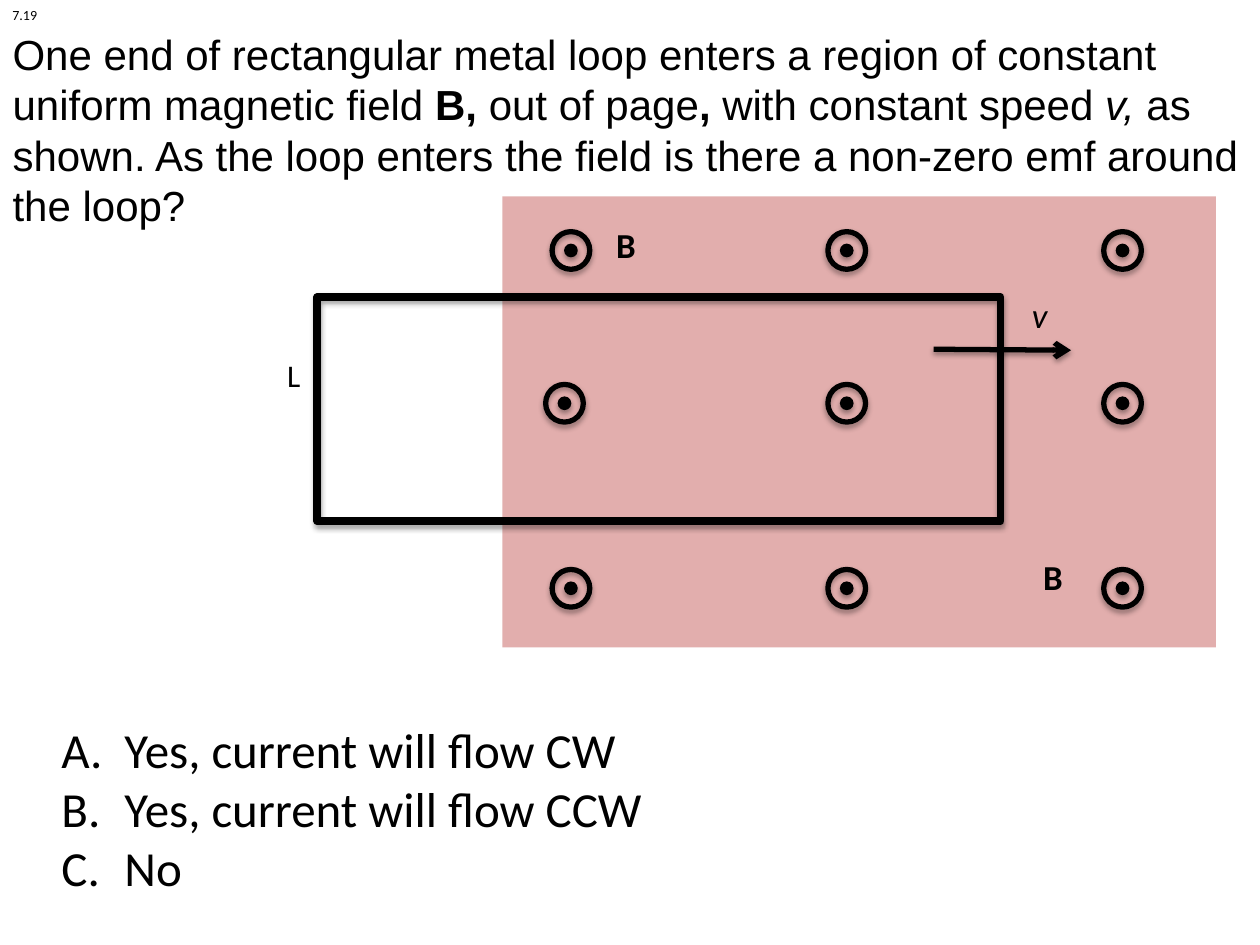
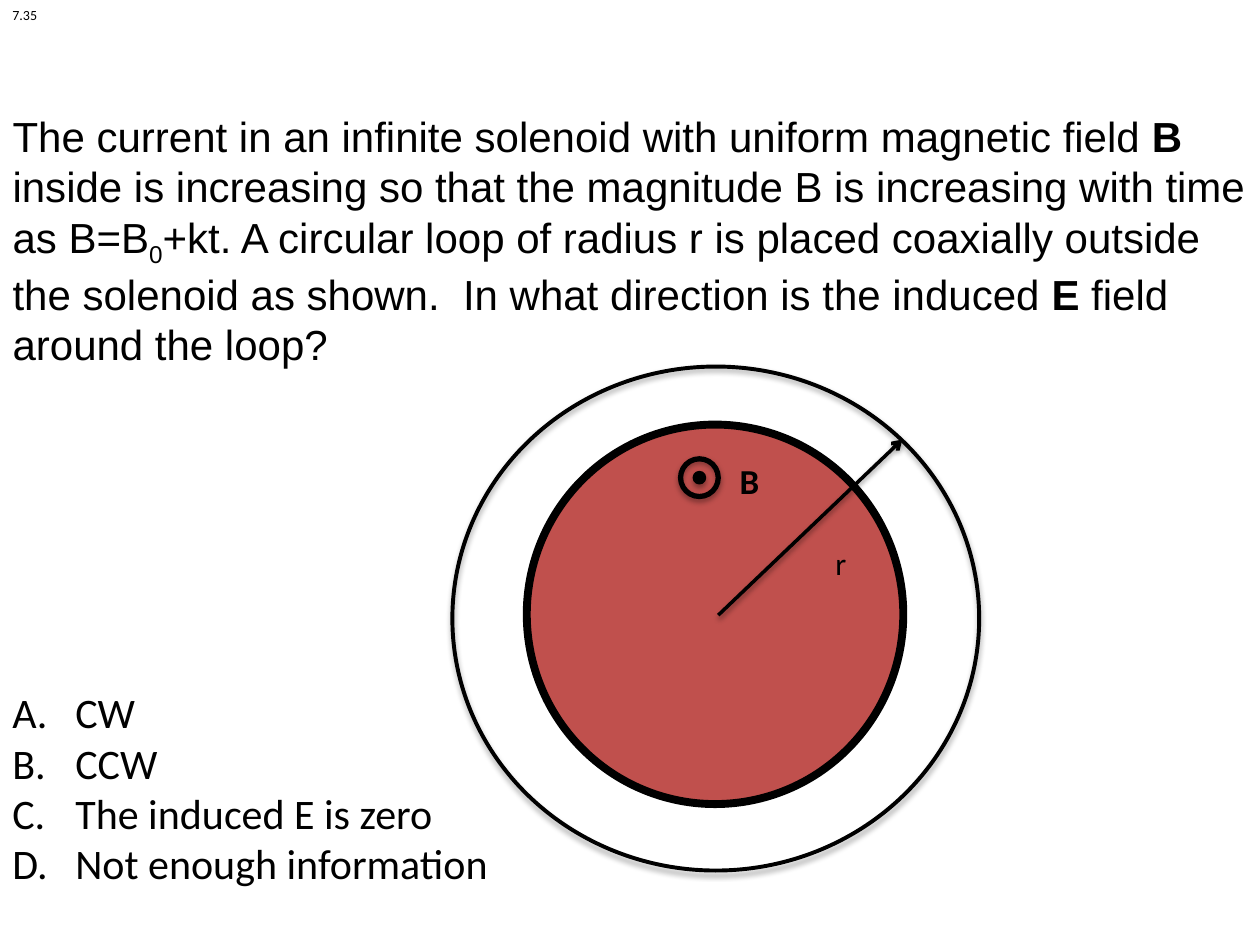
"""Build two physics concept questions on electromagnetic induction."""
from lxml.etree import SubElement
from pptx import Presentation
from pptx.dml.color import RGBColor
from pptx.enum.shapes import MSO_CONNECTOR, MSO_SHAPE
from pptx.enum.text import MSO_ANCHOR, MSO_AUTO_SIZE, PP_ALIGN
from pptx.oxml.ns import qn
from pptx.util import Cm, Pt

COLORS = {"ink": "000000", "field": "C0504D"}
QUESTION_FONT, BODY_FONT = "Arial", "Calibri"
SLIDE_WIDTH, SLIDE_HEIGHT = 25.4, 19.05
RING_SIZE, DOT_SIZE = 0.76, 0.25
COLUMN_STEP = 5.56

LOOP_QUESTION = {
    "number": "7.19",
    "title_box": (0, 0, SLIDE_WIDTH, 5.21),
    "title": [
        ("One end of rectangular metal loop enters a region of constant uniform magnetic field ", ""),
        ("B, ", "bold"),
        ("out of page", ""),
        (",", "bold"),
        (" with constant speed ", ""),
        ("v,", "italic"),
        (" as shown. As the loop enters the field is there a non-zero emf around the loop?", ""),
    ],
    "answers_box": (0.99, 14.38, 14.22, 3.84),
    "answers_size": 28,
    "answers": ["Yes, current will flow CW", "Yes, current will flow CCW", "No"],
}
FIELD_REGION = (10.13, 3.96, 14.38, 9.09)
FIELD_ROWS = [(11.13, 4.67), (11, 7.75), (11.13, 11.48)]
METAL_LOOP = (6.4, 5.99, 13.77, 4.52)
VELOCITY = (18.82, 7.04, 21.59, 7.06)
LOOP_LABELS = [
    ("B", (12.17, 4.39, 1.02, 1.12), 20, "bold"),
    ("B", (20.78, 11.07, 1.02, 1.12), 20, "bold"),
    ("v", (20.55, 5.79, 1.04, 1.12), 20, "italic"),
    ("L", (5.54, 7.06, 0.84, 1.02), 18, ""),
]

SOLENOID_QUESTION = {
    "number": "7.35",
    "title_box": (0, 1.57, SLIDE_WIDTH, 6.53),
    "title": [
        ("The current in an infinite solenoid with uniform magnetic field ", ""),
        ("B", "bold"),
        (" inside is increasing so that the magnitude B is increasing with time as B=B", ""),
        ("0", "subscript"),
        ("+kt. A circular loop of radius r is placed coaxially outside the solenoid as shown.  "
         "In what direction is the induced ", ""),
        ("E", "bold"),
        (" field around the loop?", ""),
    ],
    "answers_box": (0, 13.72, 17.45, 4.37),
    "answers_size": 24,
    "answers": ["CW", "CCW", "The induced E is zero", "Not enough information"],
}
SOLENOID = (10.62, 8.56, 7.59, 7.65)
CIRCULAR_LOOP = (9.12, 7.39, 10.62, 10.16)
SOLENOID_FIELD = (13.72, 9.25)
RADIUS = (14.48, 12.4, 18.19, 8.86)
FIELD_LABEL = ("B", (14.66, 9.14, 1.02, 1.12), 20, "bold")
RADIUS_LABEL = ("r", (16.59, 10.85, 1.04, 1.02), 18, "")


def color(name):
    return RGBColor.from_string(COLORS[name])


def lengths(values):
    return [Cm(value) for value in values]


def style_paragraph(paragraph, size, name=BODY_FONT, style=""):
    font = paragraph.font
    font.size, font.name = Pt(size), name
    font.color.rgb = color("ink")
    font.bold, font.italic = style == "bold", style == "italic"


def set_shadow(shape, distance=None, alpha=35):
    effects = SubElement(shape._element.spPr, qn("a:effectLst"))
    if distance is None:
        return
    shadow = SubElement(effects, qn("a:outerShdw"), blurRad=str(Pt(3.1)),
                        dist=str(Pt(distance)), dir="5400000", rotWithShape="0")
    shade = SubElement(shadow, qn("a:srgbClr"), val=COLORS["ink"])
    SubElement(shade, qn("a:alpha"), val=str(alpha * 1000))


def add_outline(shapes, kind, box, fill=None, line_width=None, shadow=None, opacity=None):
    shape = shapes.add_shape(kind, *lengths(box))
    if fill:
        shape.fill.solid()
        shape.fill.fore_color.rgb = color(fill)
    else:
        shape.fill.background()
    if opacity:
        tint = shape._element.spPr.find(".//" + qn("a:srgbClr"))
        SubElement(tint, qn("a:alpha"), val=str(opacity * 1000))
    if line_width:
        shape.line.color.rgb = color("ink")
        shape.line.width = Pt(line_width)
    else:
        shape.line.fill.background()
    set_shadow(shape, shadow)


def add_field_symbol(slide, left, top):
    shapes = slide.shapes.add_group_shape().shapes
    inset = (RING_SIZE - DOT_SIZE) / 2
    add_outline(shapes, MSO_SHAPE.OVAL, (left, top, RING_SIZE, RING_SIZE), None, 3, 1.8)
    add_outline(shapes, MSO_SHAPE.OVAL, (left + inset, top + inset, DOT_SIZE, DOT_SIZE),
                "ink", 0.75, 1.8)


def add_arrow(slide, ends, width):
    arrow = slide.shapes.add_connector(MSO_CONNECTOR.STRAIGHT, *lengths(ends))
    arrow.line.color.rgb = color("ink")
    arrow.line.width = Pt(width)
    SubElement(arrow.line._get_or_add_ln(), qn("a:tailEnd"), type="arrow")
    set_shadow(arrow, 1.6, 38)


def add_label(slide, text, box, size, style="", fill=None):
    label = slide.shapes.add_textbox(*lengths(box))
    label.text_frame.word_wrap = False
    label.text_frame.text = text
    style_paragraph(label.text_frame.paragraphs[0], size, style=style)
    if fill:
        label.fill.solid()
        label.fill.fore_color.rgb = color(fill)


def add_title(slide, box, runs):
    title = slide.shapes.title
    title.left, title.top, title.width, title.height = lengths(box)
    frame = title.text_frame
    frame.auto_size = MSO_AUTO_SIZE.NONE
    frame.vertical_anchor = MSO_ANCHOR.MIDDLE
    paragraph = frame.paragraphs[0]
    paragraph.alignment = PP_ALIGN.LEFT
    style_paragraph(paragraph, 24, QUESTION_FONT)
    for text, style in runs:
        run = paragraph.add_run()
        run.text = text
        if style == "bold":
            run.font.bold = True
        elif style == "italic":
            run.font.italic = True
        elif style == "subscript":
            run.font._element.set("baseline", "-25000")


def add_answers(slide, box, size, answers):
    frame = slide.shapes.add_textbox(*lengths(box)).text_frame
    frame.word_wrap = True
    frame.text = "\n".join(answers)
    for paragraph in frame.paragraphs:
        properties = paragraph._p.get_or_add_pPr()
        properties.set("marL", str(Cm(1.27)))
        properties.set("indent", str(-Cm(1.27)))
        SubElement(properties, qn("a:buAutoNum"), type="alphaUcPeriod")
        style_paragraph(paragraph, size)


def add_question(presentation, question):
    slide = presentation.slides.add_slide(presentation.slide_layouts.get_by_name("Title Only"))
    add_title(slide, question["title_box"], question["title"])
    add_answers(slide, question["answers_box"], question["answers_size"], question["answers"])
    add_label(slide, question["number"], (0, 0, 1.02, 0.61), 8)
    return slide


def draw_moving_loop(slide):
    add_outline(slide.shapes, MSO_SHAPE.RECTANGLE, FIELD_REGION, "field", opacity=46)
    for left, top in FIELD_ROWS:
        add_field_symbol(slide, left, top)
        for column in (1, 2):
            add_field_symbol(slide, FIELD_ROWS[0][0] + column * COLUMN_STEP, top)
    add_outline(slide.shapes, MSO_SHAPE.RECTANGLE, METAL_LOOP, None, 4.5, 1.8)
    add_arrow(slide, VELOCITY, 3)
    for label in LOOP_LABELS:
        add_label(slide, *label)


def draw_solenoid(slide):
    add_outline(slide.shapes, MSO_SHAPE.OVAL, SOLENOID, "field", 4.5)
    add_label(slide, *FIELD_LABEL)
    add_field_symbol(slide, *SOLENOID_FIELD)
    add_outline(slide.shapes, MSO_SHAPE.OVAL, CIRCULAR_LOOP, None, 2.25, 1.8)
    add_arrow(slide, RADIUS, 2)
    add_label(slide, *RADIUS_LABEL, fill="field")


def main():
    presentation = Presentation()
    presentation.slide_width, presentation.slide_height = Cm(SLIDE_WIDTH), Cm(SLIDE_HEIGHT)
    draw_moving_loop(add_question(presentation, LOOP_QUESTION))
    draw_solenoid(add_question(presentation, SOLENOID_QUESTION))
    presentation.save("out.pptx")


if __name__ == "__main__":
    main()
